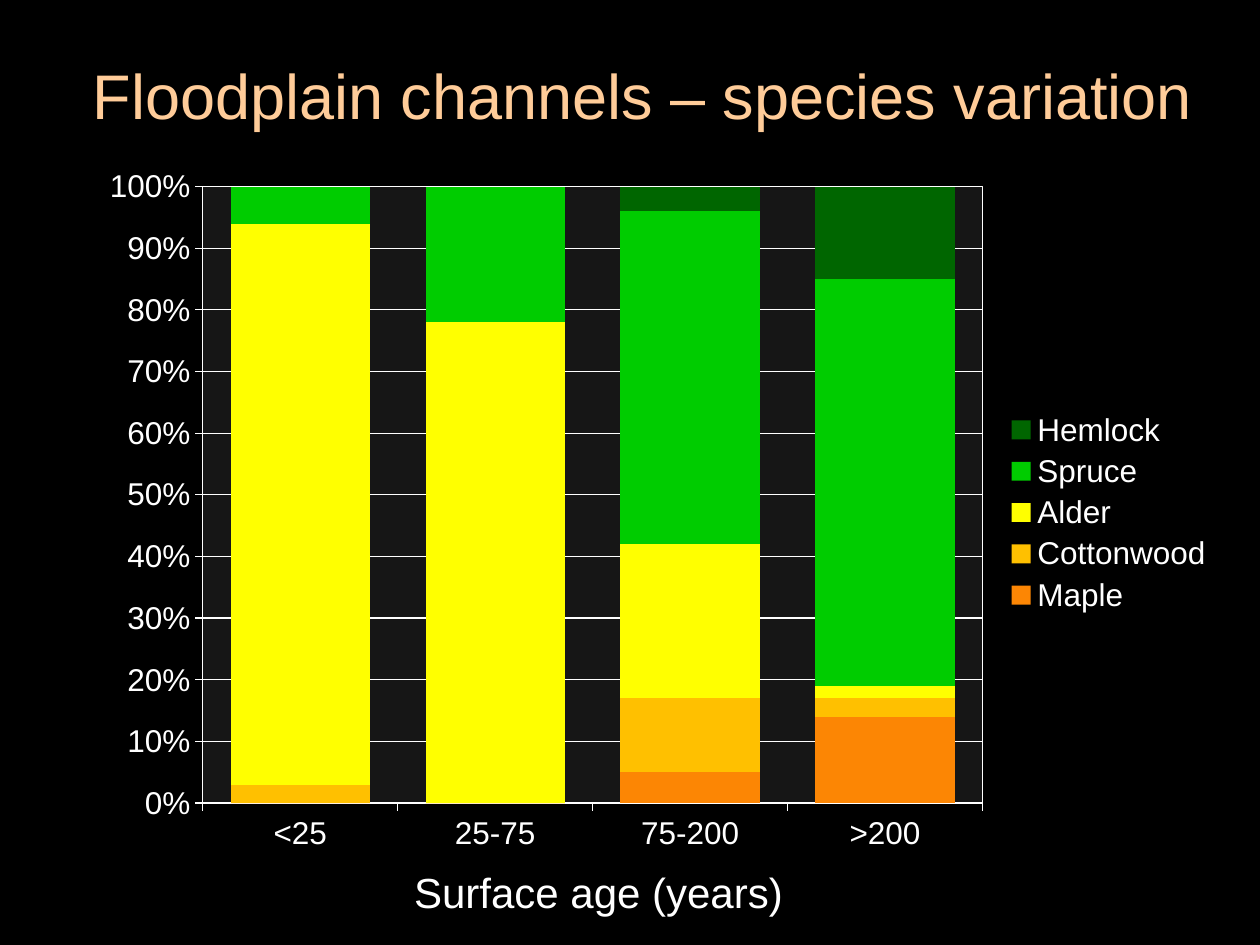
from lxml import etree
from pptx import Presentation
from pptx.chart.data import CategoryChartData
from pptx.dml.color import RGBColor
from pptx.enum.chart import XL_CHART_TYPE, XL_LEGEND_POSITION, XL_TICK_MARK
from pptx.enum.text import MSO_ANCHOR, MSO_AUTO_SIZE, PP_ALIGN
from pptx.oxml import parse_xml
from pptx.oxml.ns import nsdecls, qn
from pptx.util import Inches, Pt

AGES = ["<25", "25-75", "75-200", ">200"]
SPECIES = [
    ("Maple", "FC8604", (0, 0, 5, 14)),
    ("Cottonwood", "FFC000", (3, 0, 12, 3)),
    ("Alder", "FFFF00", (91, 78, 25, 2)),
    ("Spruce", "00CC00", (6, 22, 54, 66)),
    ("Hemlock", "006600", (0, 0, 4, 15)),
]


def rgb(hex_color):
    return RGBColor.from_string(hex_color)


def layout_xml(target=None, **shares):
    """Return a c:layout that fixes a chart part at shares of the chart area."""
    layout = parse_xml(f"<c:layout {nsdecls('c')}><c:manualLayout/></c:layout>")
    settings = {"layoutTarget": target} if target else {}
    settings.update(xMode="edge", yMode="edge", **shares)
    for tag, value in settings.items():
        etree.SubElement(layout[0], qn(f"c:{tag}")).set("val", str(value))
    return layout


class Deck:
    """Holds the style and the current slide; boxes are shares of the slide's size."""

    font = "Arial"
    background = "000000"
    ink = "FFFFFF"
    accent = "FFCC99"
    plot_fill = "161616"

    def __init__(self, width, height):
        self.presentation = Presentation()
        self.presentation.slide_width = self.width = Inches(width)
        self.presentation.slide_height = self.height = Inches(height)
        self.slide = None

    def add_slide(self):
        self.slide = self.presentation.slides.add_slide(self.presentation.slide_layouts[6])
        fill = self.slide.background.fill
        fill.solid()
        fill.fore_color.rgb = rgb(self.background)

    def box(self, left, top, width, height):
        return (int(left * self.width), int(top * self.height),
                int(width * self.width), int(height * self.height))

    def style_font(self, font, size, color):
        font.name = self.font
        font.size = Pt(size)
        font.color.rgb = rgb(color)

    def text(self, words, place, size, color, anchor=MSO_ANCHOR.TOP, grow=False):
        """Add centred text; a growing box keeps to one line and fits its text."""
        frame = self.slide.shapes.add_textbox(*self.box(*place)).text_frame
        frame.word_wrap = not grow
        frame.auto_size = MSO_AUTO_SIZE.SHAPE_TO_FIT_TEXT if grow else MSO_AUTO_SIZE.NONE
        frame.vertical_anchor = anchor
        paragraph = frame.paragraphs[0]
        paragraph.alignment = PP_ALIGN.CENTER
        run = paragraph.add_run()
        run.text = words
        self.style_font(run.font, size, color)

    def stacked_chart(self, categories, series, place, size):
        data = CategoryChartData(number_format="0")
        data.categories = categories
        for name, _, values in series:
            data.add_series(name, values)
        chart = self.slide.shapes.add_chart(
            XL_CHART_TYPE.COLUMN_STACKED_100, *self.box(*place), data).chart
        chart.has_title = False
        self.style_font(chart.font, size, self.ink)

        plot = chart.plots[0]
        plot.gap_width, plot.overlap = 40, 100
        plot.vary_by_categories = False
        for column, (_, color, _) in zip(plot.series, series):
            column.format.fill.solid()
            column.format.fill.fore_color.rgb = rgb(color)

        self.style_axes(chart)
        self.style_plot_area(chart)
        self.style_legend(chart)

    def style_axes(self, chart):
        percent = chart.value_axis
        percent.minimum_scale, percent.maximum_scale = 0, 1
        percent.major_unit = 0.1
        percent.has_major_gridlines = True
        percent.tick_labels.number_format = "0%"
        percent.tick_labels.number_format_is_linked = False
        for axis in (percent, chart.category_axis):
            axis.major_tick_mark = XL_TICK_MARK.OUTSIDE
            self.style_line(axis.format.line)
        self.style_line(percent.major_gridlines.format.line)

    def style_line(self, line):
        line.color.rgb = rgb(self.ink)
        line.width = Pt(0.75)

    def style_plot_area(self, chart):
        area = chart.plots[0]._element.getparent()
        for old in area.findall(qn("c:layout")):
            area.remove(old)
        area.insert(0, layout_xml("inner", x=0.1, y=0.05, w=0.68, h=0.87))
        area.append(parse_xml(
            f"<c:spPr {nsdecls('c', 'a')}>"
            f'<a:solidFill><a:srgbClr val="{self.plot_fill}"/></a:solidFill>'
            f'<a:ln w="9525"><a:solidFill><a:srgbClr val="{self.ink}"/></a:solidFill></a:ln>'
            "</c:spPr>"))

    def style_legend(self, chart):
        chart.has_legend = True
        legend = chart.legend
        legend.position = XL_LEGEND_POSITION.RIGHT
        legend.include_in_layout = False
        for old in legend._element.findall(qn("c:layout")):
            legend._element.remove(old)
        legend._element.find(qn("c:legendPos")).addnext(
            layout_xml(x=0.79, y=0.36, w=0.2, h=0.3))

    def save(self):
        self.presentation.save("out.pptx")


def main():
    deck = Deck(10, 7.5)
    deck.add_slide()
    deck.text("Floodplain channels – species variation", (0.06, 0.02, 0.9, 0.16),
              36, deck.accent, MSO_ANCHOR.MIDDLE)
    deck.stacked_chart(AGES, SPECIES, (0.07, 0.16, 0.91, 0.75), 18)
    deck.text("Surface age (years)", (0.31, 0.91, 0.33, 0.07), 24, deck.ink, grow=True)
    deck.save()


if __name__ == "__main__":
    main()
